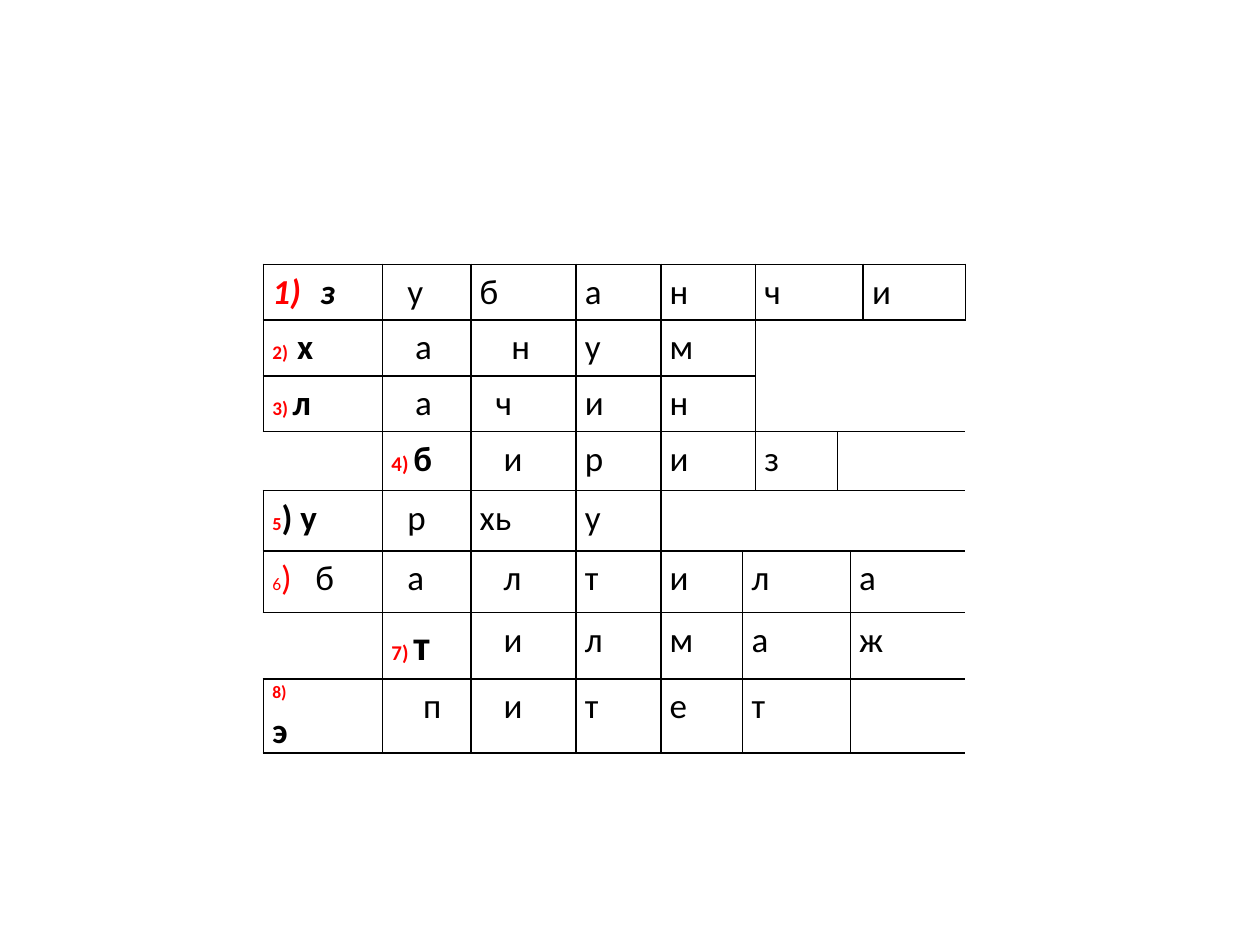
import pptx
import pptx.util
import pptx.dml.color
import pptx.oxml
import pptx.oxml.ns
from dataclasses import dataclass
from pptx.util import Cm

COLORS = {"number": "FF0000", "letter": "000000", "grid": "000000"}
FONT = "Calibri"
NO_GRID_STYLE = "{2D5ABB26-0587-4C30-8999-92F81FD0307C}"
COLUMN_WIDTHS = [2.4, 1.78, 2.12, 1.71, 1.65, 0.26, 1.65, 0.26, 0.26, 2.06]
ROW_HEIGHTS = [1.12, 1.13, 1.12, 1.19, 1.22, 1.24, 1.34, 1.16]
SPACE_WIDTH = 0.16


@dataclass
class Clue:
    """One crossword word: numbered first cell, other letters, and column spans."""
    number: list
    first: str
    letters: list
    spans: list
    indents: list
    start: int = 0
    tab: float = 0
    size: float = 20
    bold: bool = True
    italic: bool = False


CLUES = [
    Clue([], "з", ["у", "б", "а", "н", "ч", "и"], [1, 1, 1, 1, 2, 3, 1], [2], italic=True),
    Clue([("2)\t", 11)], "х", ["а", "н", "у", "м"], [1, 1, 1, 1, 2], [3, 4], tab=0.5),
    Clue([("3) ", 11)], "л", ["а", "ч", "и", "н"], [1, 1, 1, 1, 2], [3, 2]),
    Clue([("4) ", 12)], "б", ["и", "р", "и", "з"], [1, 1, 1, 2, 1], [3], start=1),
    Clue([("5", 10.5)], ") у", ["р", "хь", "у"], [1, 1, 1, 1], [2]),
    Clue([("6", 10), (")\t", 20)], "б", ["а", "л", "т", "и", "л", "а"],
         [1, 1, 1, 1, 1, 3, 2], [2, 3], tab=0.87, bold=False),
    Clue([("7) ", 12)], "т", ["и", "л", "м", "а", "ж"], [1, 1, 1, 1, 3, 2], [3],
         start=1, size=24),
    Clue([("8)\t", 10)], "э", ["п", "и", "т", "е", "т"], [1, 1, 1, 1, 1, 3], [4, 3], tab=1.75),
]
BLANKS = [(1, 5 + 1, 2, 4, "LT"), (3, 0, 1, 1, "TRB"), (3, 7, 1, 3, "LB"),
          (4, 4, 1, 6, "LTB"), (6, 0, 1, 1, "TRB"), (7, 8, 1, 2, "LTB")]


def add_xml(parent, xml):
    """Append a DrawingML fragment to a parent element."""
    namespace = pptx.oxml.ns.nsdecls("a")
    parent.append(pptx.oxml.parse_xml(xml.replace(" ", f" {namespace} ", 1)))


def draw_region(table, row, column, height, width, sides="LRTB"):
    """Merge a block of cells, border its outer sides and return its first cell."""
    first = table.cell(row, column)
    if height * width > 1:
        first.merge(table.cell(row + height - 1, column + width - 1))
    for r in range(height):
        for c in range(width):
            cell = table.cell(row + r, column + c)
            outer = {"L": c == 0, "R": c == width - 1, "T": r == 0, "B": r == height - 1}
            for side in "LRTB":
                if side in sides and outer[side]:
                    add_xml(cell._tc.get_or_add_tcPr(),
                            f'<a:ln{side} w="12700"><a:solidFill><a:srgbClr val="{COLORS["grid"]}"/>'
                            f'</a:solidFill></a:ln{side}>')
            cell.fill.background()
            cell.margin_left = cell.margin_right = Cm(0.18)
            cell.margin_top = cell.margin_bottom = 0
    return first


def format_run(run, size, color, bold=False, italic=False):
    """Apply the crossword font to a run."""
    run.font.name, run.font.size = FONT, pptx.util.Pt(size)
    run.font.bold, run.font.italic = bold, italic
    run.font.color.rgb = pptx.dml.color.RGBColor.from_string(COLORS[color])


def space_paragraph(paragraph):
    """Set the line spacing shared by all letters."""
    paragraph.line_spacing = 1.15
    paragraph.space_after = pptx.util.Pt(10)


def write_first(cell, clue):
    """Write the clue number and its first letter."""
    paragraph = cell.text_frame.paragraphs[0]
    properties = paragraph._p.get_or_add_pPr()
    if not clue.number:
        properties.set("marL", str(Cm(0.97)))
        properties.set("indent", str(Cm(-0.97)))
        add_xml(properties, f'<a:buClr ><a:srgbClr val="{COLORS["number"]}"/></a:buClr>')
        add_xml(properties, '<a:buAutoNum type="arabicParenR"/>')
    if clue.tab:
        add_xml(properties, f'<a:tabLst ><a:tab pos="{Cm(clue.tab)}" algn="l"/></a:tabLst>')
    space_paragraph(paragraph)
    for text, size in clue.number:
        run = paragraph.add_run()
        run.text = text
        format_run(run, size, "number", clue.bold)
    run = paragraph.add_run()
    run.text = clue.first
    format_run(run, clue.size, "letter", clue.bold, clue.italic)


def write_letter(cell, letter, indent):
    """Write a plain letter, indented by a number of space widths."""
    paragraph = cell.text_frame.paragraphs[0]
    paragraph.text = letter
    if indent:
        paragraph._p.get_or_add_pPr().set("marL", str(Cm(indent * SPACE_WIDTH)))
    space_paragraph(paragraph)
    format_run(paragraph.runs[0], 20, "letter")


def write_clue(table, row, clue):
    """Fill one row of the crossword."""
    column = clue.start
    for index, span in enumerate(clue.spans):
        cell = draw_region(table, row, column, 1, span)
        if index == 0:
            write_first(cell, clue)
        else:
            indent = clue.indents[index - 1] if index <= len(clue.indents) else 0
            write_letter(cell, clue.letters[index - 1], indent)
        column += span


def add_crossword(slide):
    """Add the empty, unstyled crossword table."""
    table = slide.shapes.add_table(
        len(ROW_HEIGHTS), len(COLUMN_WIDTHS), Cm(5.31), Cm(5.33),
        Cm(sum(COLUMN_WIDTHS)), Cm(sum(ROW_HEIGHTS))).table
    table.first_row = table.horz_banding = False
    table._tbl.tblPr.find(pptx.oxml.ns.qn("a:tableStyleId")).text = NO_GRID_STYLE
    for column, width in zip(table.columns, COLUMN_WIDTHS):
        column.width = Cm(width)
    for row, height in zip(table.rows, ROW_HEIGHTS):
        row.height = Cm(height)
    return table


def main():
    """Build the crossword slide."""
    deck = pptx.Presentation()
    deck.slide_width, deck.slide_height = Cm(25.4), Cm(19.05)
    crossword = add_crossword(deck.slides.add_slide(deck.slide_layouts[6]))
    for row, clue in enumerate(CLUES):
        write_clue(crossword, row, clue)
    for blank in BLANKS:
        draw_region(crossword, *blank)
    deck.save("out.pptx")


if __name__ == "__main__":
    main()
